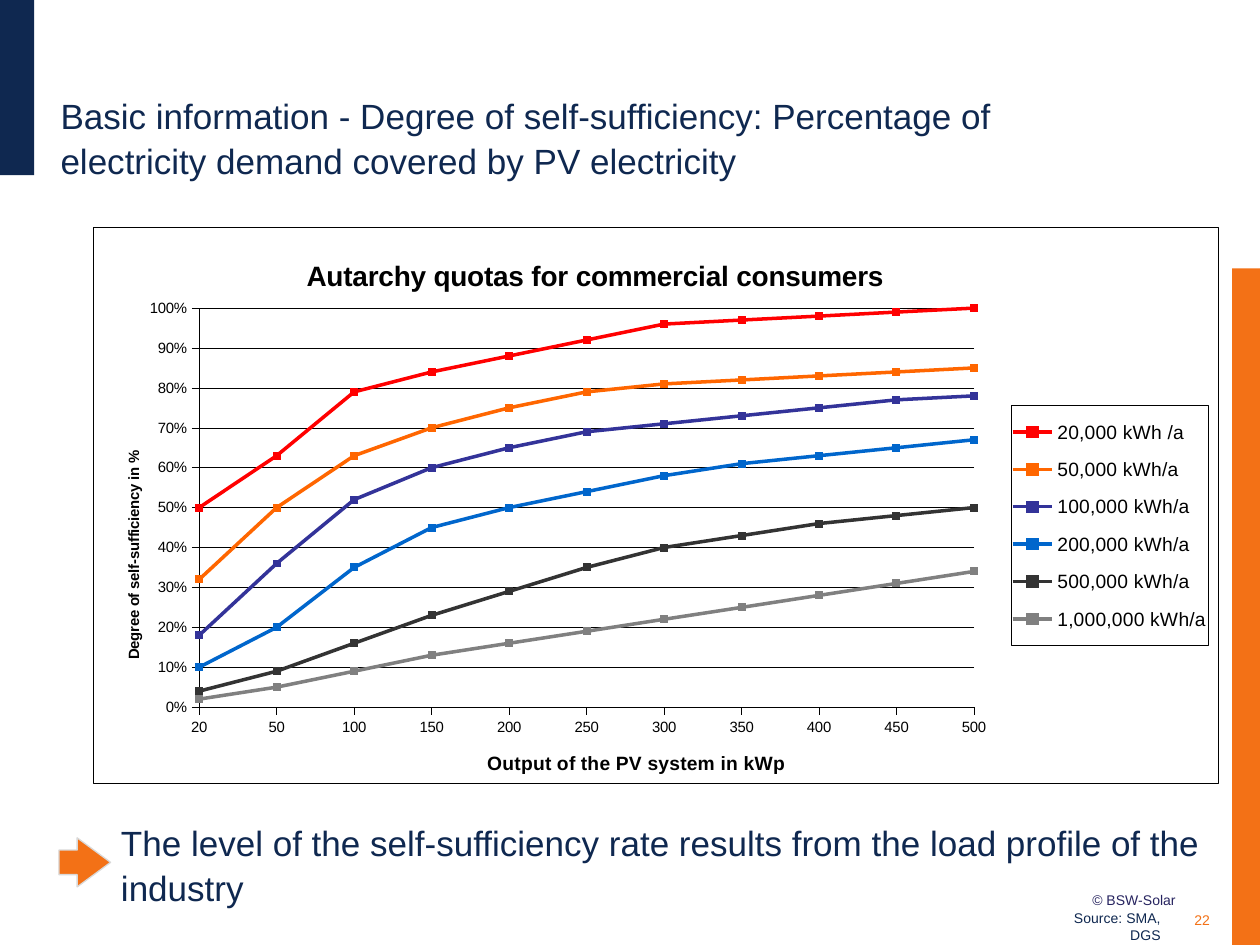
"""Build the slide on self-sufficiency quotas of commercial PV consumers."""
from lxml.etree import SubElement
from pptx import Presentation
from pptx.chart.data import CategoryChartData
from pptx.dml.color import RGBColor
from pptx.enum.chart import XL_CHART_TYPE as ChartType, XL_LEGEND_POSITION as LegendPosition
from pptx.enum.chart import XL_MARKER_STYLE as MarkerStyle, XL_TICK_MARK as TickMark
from pptx.enum.shapes import MSO_SHAPE as Shape
from pptx.enum.text import MSO_ANCHOR as Anchor, MSO_AUTO_SIZE as AutoSize, PP_ALIGN as Align
from pptx.oxml import parse_xml
from pptx.oxml.ns import nsdecls, qn
from pptx.util import Cm, Pt

NAVY = RGBColor(0x0F, 0x28, 0x50)
ORANGE = RGBColor(0xF3, 0x71, 0x16)
INDIGO = RGBColor(0x26, 0x23, 0x5F)
LIGHT_GREY = RGBColor(0xD9, 0xD9, 0xD9)
BLACK = RGBColor(0, 0, 0)
FONT = "Arial"

CAPACITIES = ["20", "50", "100", "150", "200", "250", "300", "350", "400", "450", "500"]
CONSUMERS = [
    ("20,000 kWh /a", RGBColor(0xFF, 0x00, 0x00), [50, 63, 79, 84, 88, 92, 96, 97, 98, 99, 100]),
    ("50,000 kWh/a", RGBColor(0xFF, 0x66, 0x00), [32, 50, 63, 70, 75, 79, 81, 82, 83, 84, 85]),
    ("100,000 kWh/a", RGBColor(0x33, 0x33, 0x99), [18, 36, 52, 60, 65, 69, 71, 73, 75, 77, 78]),
    ("200,000 kWh/a", RGBColor(0x00, 0x66, 0xCC), [10, 20, 35, 45, 50, 54, 58, 61, 63, 65, 67]),
    ("500,000 kWh/a", RGBColor(0x33, 0x33, 0x33), [4, 9, 16, 23, 29, 35, 40, 43, 46, 48, 50]),
    ("1,000,000 kWh/a", RGBColor(0x80, 0x80, 0x80), [2, 5, 9, 13, 16, 19, 22, 25, 28, 31, 34]),
]


def write_text(shape, text, size, color, frame_format, paragraph_format):
    """Fill a text shape with one formatted paragraph."""
    frame = shape.text_frame
    frame.text = text
    paragraph = frame.paragraphs[0]
    margins = dict.fromkeys(["margin_left", "margin_top", "margin_right", "margin_bottom"], 0)
    frame_values = {"word_wrap": True, "auto_size": AutoSize.NONE, **margins, **frame_format}
    font_values = {"name": FONT, "size": Pt(size)}
    for target, values in [(frame, frame_values), (paragraph, paragraph_format), (paragraph.font, font_values)]:
        for name, value in values.items():
            setattr(target, name, value)
    paragraph.font.color.rgb = color


def place_part(element, index, **fractions):
    """Give a chart part a manual layout in fractions of the chart."""
    for old_layout in element.findall(qn("c:layout")):
        element.remove(old_layout)
    layout = parse_xml(f"<c:layout {nsdecls('c')}><c:manualLayout/></c:layout>")
    if "w" in fractions and element.tag == qn("c:plotArea"):
        SubElement(layout[0], qn("c:layoutTarget")).set("val", "inner")
    for side in ("x", "y"):
        SubElement(layout[0], qn(f"c:{side}Mode")).set("val", "edge")
    for name, value in fractions.items():
        SubElement(layout[0], qn(f"c:{name}")).set("val", str(value))
    element.insert(index, layout)


presentation = Presentation()
presentation.slide_width, presentation.slide_height = Cm(25.4), Cm(19.05)
slide = presentation.slides.add_slide(presentation.slide_layouts[5])

for kind, box, color in [
    (Shape.RECTANGLE, (24.84, 5.41, 0.56, 13.64), ORANGE),
    (Shape.RECTANGLE, (0, 0, 0.69, 3.53), NAVY),
    (Shape.RIGHT_ARROW, (1.19, 16.89, 1.04, 0.99), ORANGE),
]:
    shape = slide.shapes.add_shape(kind, *map(Cm, box))
    shape.shadow.inherit = False
    shape.fill.solid()
    shape.fill.fore_color.rgb = color
    if kind == Shape.RIGHT_ARROW:
        shape.adjustments[1] = 0.68
        shape.line.color.rgb = LIGHT_GREY
        shape.line.width = Pt(0.75)
    else:
        shape.line.fill.background()

title = slide.shapes.title
title.left, title.top, title.width, title.height = map(Cm, (1.22, 1.63, 21.08, 2.03))
write_text(
    title,
    "Basic information - Degree of self-sufficiency: Percentage of electricity demand covered by PV electricity",
    20, NAVY, {"vertical_anchor": Anchor.BOTTOM}, {"alignment": Align.LEFT, "line_spacing": 1.07},
)

bottom = {"vertical_anchor": Anchor.BOTTOM}
inset = {"margin_left": Cm(0.25), "margin_right": Cm(0.25), "margin_top": Cm(0.13)}
for text, box, size, color, frame_format, paragraph_format in [
    ("© BSW-Solar", (22.02, 17.96, 1.83, 0.36), 8, INDIGO, bottom, {}),
    ("Source: SMA, DGS", (20.75, 18.21, 2.9, 0.61), 8, NAVY, inset, {"alignment": Align.RIGHT}),
    ("22", (23.88, 17.73, 0.71, 0.99), 8, ORANGE, bottom, {"alignment": Align.CENTER}),
    ("The level of the self-sufficiency rate results from the load profile of the industry",
     (2.44, 16.81, 21.79, 1.19), 20, NAVY, {"vertical_anchor": Anchor.MIDDLE}, {"line_spacing": 1.07}),
]:
    text_box = slide.shapes.add_textbox(*map(Cm, box))
    write_text(text_box, text, size, color, frame_format, paragraph_format)

chart_data = CategoryChartData(number_format="0%")
chart_data.categories = CAPACITIES
for name, color, percentages in CONSUMERS:
    chart_data.add_series(name, [percentage / 100 for percentage in percentages])
chart_box = map(Cm, (1.88, 4.57, 22.68, 11.23))
chart = slide.shapes.add_chart(ChartType.LINE_MARKERS, *chart_box, chart_data).chart
chart.font.name, chart.font.size = FONT, Pt(8.5)
chart.font.color.rgb = BLACK
chart.plots[0].vary_by_categories = False

for series, (name, color, percentages) in zip(chart.plots[0].series, CONSUMERS):
    series.smooth = False
    series.format.line.color.rgb = color
    series.format.line.width = Pt(2)
    series.marker.style, series.marker.size = MarkerStyle.SQUARE, 4
    series.marker.format.fill.solid()
    series.marker.format.fill.fore_color.rgb = color
    series.marker.format.line.color.rgb = color

category_axis, value_axis = chart.category_axis, chart.value_axis
value_axis.minimum_scale, value_axis.maximum_scale, value_axis.major_unit = 0, 1, 0.1
value_axis.tick_labels.number_format = "0%"
value_axis.tick_labels.number_format_is_linked = False
value_axis.has_major_gridlines = True
for axis in (category_axis, value_axis):
    axis.major_tick_mark = TickMark.OUTSIDE
for line in (category_axis.format.line, value_axis.format.line, value_axis.major_gridlines.format.line):
    line.color.rgb = BLACK
    line.width = Pt(0.25)

for owner, text, size in [
    (chart, "Autarchy quotas for commercial consumers", 16),
    (category_axis, "Output of the PV system in kWp", 11),
    (value_axis, "Degree of self-sufficiency in %", 8.5),
]:
    owner.has_title = True
    heading = owner.chart_title if owner is chart else owner.axis_title
    heading.text_frame.text = text
    font = heading.text_frame.paragraphs[0].font
    for name, value in {"name": FONT, "size": Pt(size), "bold": True}.items():
        setattr(font, name, value)
    font.color.rgb = BLACK

chart.has_legend = True
legend = chart.legend
legend.position, legend.include_in_layout = LegendPosition.RIGHT, False
legend.font.name, legend.font.size = FONT, Pt(11)
legend.font.color.rgb = BLACK

chart_space = chart.element
for query, index, fractions in [
    ("c:chart/c:plotArea", 0, {"x": 0.094, "y": 0.146, "w": 0.689, "h": 0.717}),
    ("c:chart/c:title", 1, {"x": 0.185, "y": 0.047}),
    (".//c:catAx/c:title", 1, {"x": 0.347, "y": 0.933}),
    (".//c:valAx/c:title", 1, {"x": 0.025, "y": 0.397}),
    ("c:chart/c:legend", 1, {"x": 0.816, "y": 0.321, "w": 0.175, "h": 0.431}),
]:
    place_part(chart_space.xpath(query)[0], index, **fractions)

for old_crossing in chart_space.xpath(".//c:valAx/c:crossBetween"):
    old_crossing.getparent().remove(old_crossing)
crossing = parse_xml(f'<c:crossBetween {nsdecls("c")} val="midCat"/>')
chart_space.xpath(".//c:valAx/c:crosses")[0].addnext(crossing)

frame_xml = (
    f'<c:spPr {nsdecls("c", "a")}><a:solidFill><a:srgbClr val="FFFFFF"/></a:solidFill>'
    '<a:ln w="3175"><a:solidFill><a:srgbClr val="000000"/></a:solidFill></a:ln></c:spPr>'
)
chart_space.xpath("c:chart")[0].addnext(parse_xml(frame_xml))
chart_space.xpath("c:chart/c:legend/c:txPr")[0].addprevious(parse_xml(frame_xml))

presentation.save("out.pptx")
